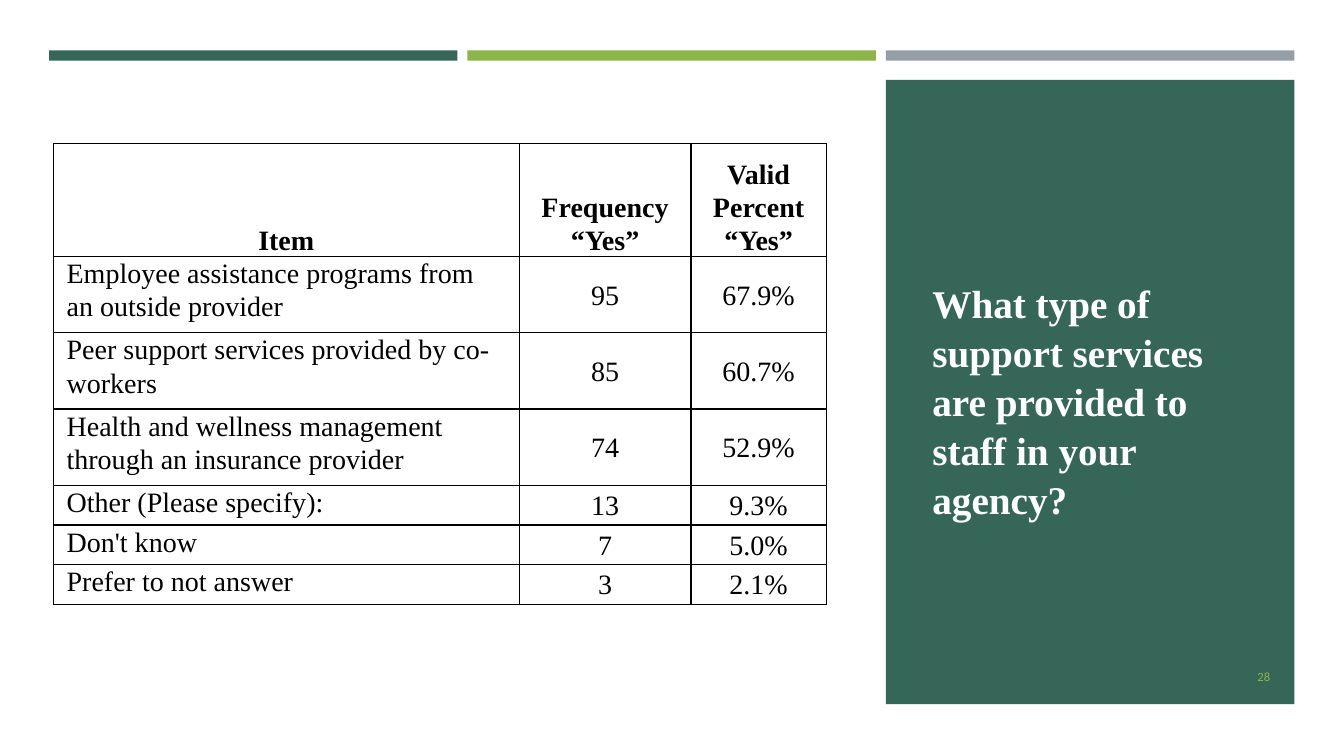
from pptx import Presentation
from pptx.dml.color import RGBColor
from pptx.enum import shapes, text
from pptx.oxml import parse_xml
from pptx.oxml import ns
from pptx.util import Pt

QUESTION = "What type of support services are provided to staff in your agency?"
PAGE_NUMBER = "28"
ROWS = [
    ("Item", "Frequency “Yes”", "Valid Percent “Yes”"),
    ("Employee assistance programs from an outside provider", "95", "67.9%"),
    ("Peer support services provided by co-workers", "85", "60.7%"),
    ("Health and wellness management through an insurance provider", "74", "52.9%"),
    ("Other (Please specify):", "13", "9.3%"),
    ("Don't know", "7", "5.0%"),
    ("Prefer to not answer", "3", "2.1%"),
]
COLUMN_WIDTHS = [332.6, 122.8, 96.6]
ROW_HEIGHTS = [80.6] + [54.5] * 3 + [28.3] * 3
GREEN, LIME, GRAY = "366658", "8CB64A", "969FA7"
BAR_COLORS = [GREEN, LIME, GRAY]
BAR_LEFT, BAR_TOP, BAR_WIDTH, BAR_HEIGHT, BAR_GAP = 35, 36, 291.7, 7.4, 7.2
PANEL_LEFT = BAR_LEFT + 2 * (BAR_WIDTH + BAR_GAP)
SERIF = "Times New Roman"

ANCHOR, ALIGN = text.MSO_ANCHOR, text.PP_ALIGN
TITLE_FRAME = {"word_wrap": True, "auto_size": text.MSO_AUTO_SIZE.NONE,
               "vertical_anchor": ANCHOR.MIDDLE, "margin_top": Pt(40.3)}
NUMBER_FRAME = {"word_wrap": True, "vertical_anchor": ANCHOR.MIDDLE}
CELL_FORMAT = {"margin_left": Pt(9.4), "margin_right": Pt(9.4),
               "margin_top": 0, "margin_bottom": 0}
TITLE_FONT = {"name": SERIF, "size": Pt(28), "bold": True}
NUMBER_FONT = {"name": "Calibri", "size": Pt(9)}


def rgb(value):
    return RGBColor.from_string(value)


def apply(target, values):
    for name, value in values.items():
        setattr(target, name, value)


def write(frame, content, font, color, paragraph_format):
    paragraph = frame.paragraphs[0]
    run = paragraph.add_run()
    run.text = content
    apply(paragraph, paragraph_format)
    apply(run.font, font)
    run.font.color.rgb = rgb(color)


def add_block(slide, left, top, width, height, color):
    shape = slide.shapes.add_shape(shapes.MSO_SHAPE.RECTANGLE,
                                   Pt(left), Pt(top), Pt(width), Pt(height))
    shape.shadow.inherit = False
    shape.fill.solid()
    shape.fill.fore_color.rgb = rgb(color)
    shape.line.fill.background()


def add_borders(cell):
    properties = cell._tc.get_or_add_tcPr()
    for position, side in enumerate(("lnL", "lnR", "lnT", "lnB")):
        properties.insert(position, parse_xml(
            f'<a:{side} {ns.nsdecls("a")} w="12700"><a:solidFill>'
            f'<a:srgbClr val="000000"/></a:solidFill></a:{side}>'))


def add_services_table(slide):
    table = slide.shapes.add_table(
        len(ROWS), len(COLUMN_WIDTHS), Pt(38.2), Pt(102.6),
        Pt(sum(COLUMN_WIDTHS)), Pt(sum(ROW_HEIGHTS))).table
    apply(table, {"first_row": False, "horz_banding": False})
    for column, width in zip(table.columns, COLUMN_WIDTHS):
        column.width = Pt(width)
    for row_index, (values, height) in enumerate(zip(ROWS, ROW_HEIGHTS)):
        table.rows[row_index].height = Pt(height)
        header = row_index == 0
        for column_index, value in enumerate(values):
            cell = table.cell(row_index, column_index)
            item = column_index == 0 and not header
            anchor = ANCHOR.BOTTOM if header else ANCHOR.TOP if item else ANCHOR.MIDDLE
            apply(cell, {**CELL_FORMAT, "vertical_anchor": anchor})
            cell.fill.background()
            add_borders(cell)
            write(cell.text_frame, value,
                  {"name": SERIF, "size": Pt(20), "bold": header}, "000000",
                  {"alignment": ALIGN.LEFT if item else ALIGN.CENTER,
                   "line_spacing": 1.07})


def main():
    presentation = Presentation()
    apply(presentation, {"slide_width": Pt(960), "slide_height": Pt(540)})
    slide = presentation.slides.add_slide(presentation.slide_layouts[5])

    for index, color in enumerate(BAR_COLORS):
        add_block(slide, BAR_LEFT + index * (BAR_WIDTH + BAR_GAP), BAR_TOP,
                  BAR_WIDTH, BAR_HEIGHT, color)
    add_block(slide, PANEL_LEFT, 57, BAR_WIDTH, 446, GREEN)

    title = slide.shapes.title
    title.element.getparent().append(title.element)
    apply(title, {"left": Pt(658.8), "top": Pt(82), "width": Pt(240.5), "height": Pt(371)})
    apply(title.text_frame, TITLE_FRAME)
    write(title.text_frame, QUESTION, TITLE_FONT, "FFFEFF",
          {"alignment": ALIGN.LEFT, "line_spacing": 1.04})

    add_services_table(slide)

    number = slide.shapes.add_textbox(Pt(831.6), Pt(468.7), Pt(82.8), Pt(28.8))
    apply(number.text_frame, NUMBER_FRAME)
    write(number.text_frame, PAGE_NUMBER, NUMBER_FONT, LIME, {"alignment": ALIGN.RIGHT})

    presentation.save("out.pptx")


if __name__ == "__main__":
    main()
